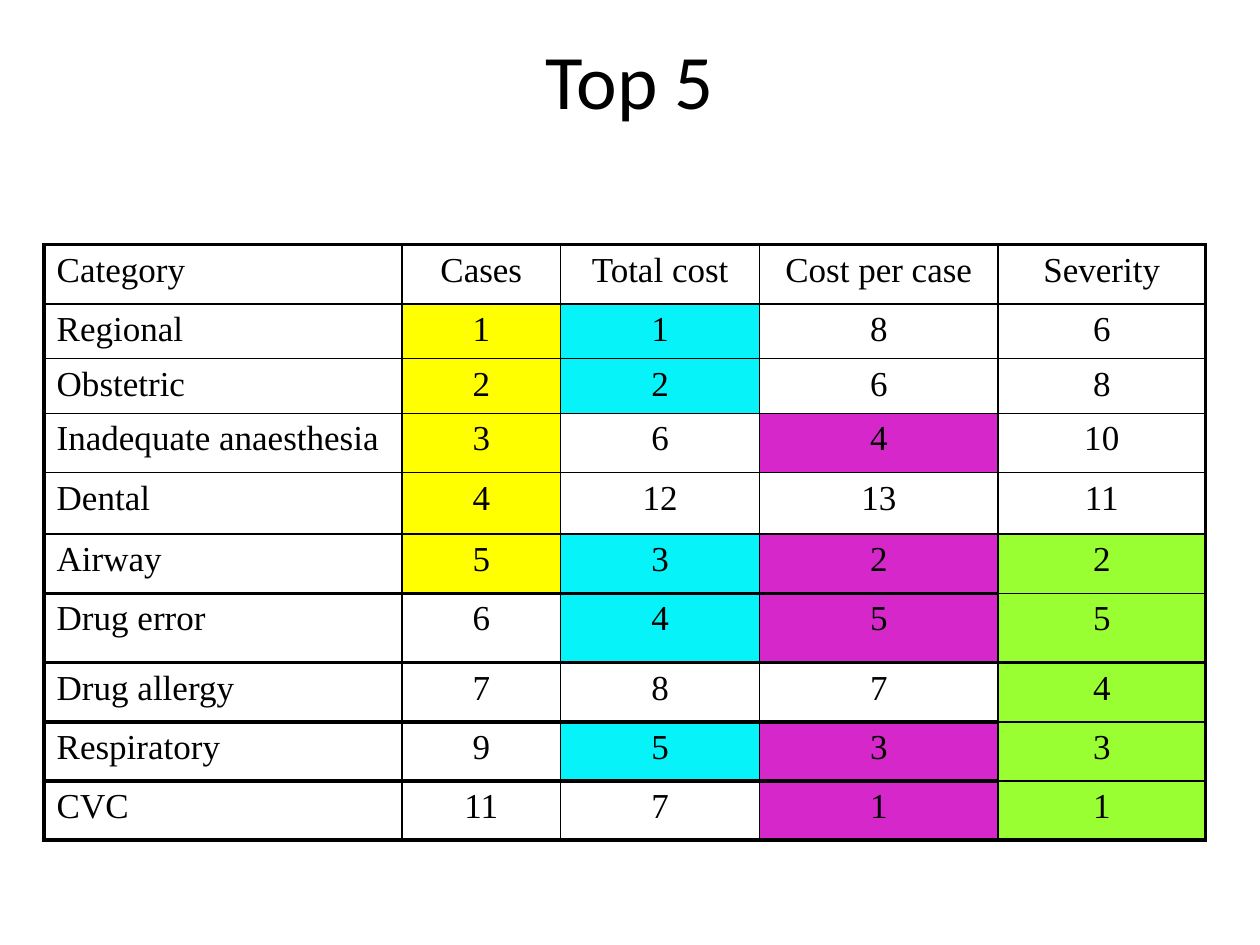
from lxml import etree
from pptx import Presentation, util as u
from pptx.dml.color import RGBColor
from pptx.enum import text
from pptx.oxml import ns

WIDE, HIGH = 10, 7.5
COLS = [2.84, 1.26, 1.58, 1.89, 1.65]
ROWS = [0.47, 0.39, 0.43, 0.47, 0.49, 0.47, 0.55, 0.47, 0.47, 0.47]
TINTS = [None, "FFFF00", "05F3F9", "D628CA", "99FF33"]
TOP = 5
THIN, THICK = 1, 2.25
DATA = [
    ("Category", "Cases", "Total cost", "Cost per case", "Severity"),
    ("Regional", 1, 1, 8, 6),
    ("Obstetric", 2, 2, 6, 8),
    ("Inadequate anaesthesia", 3, 6, 4, 10),
    ("Dental", 4, 12, 13, 11),
    ("Airway", 5, 3, 2, 2),
    ("Drug error", 6, 4, 5, 5),
    ("Drug allergy", 7, 8, 7, 4),
    ("Respiratory", 9, 5, 3, 3),
    ("CVC", 11, 7, 1, 1),
]


def color(code):
    return RGBColor.from_string(code)


def share(left, top, wide, high):
    """Turn percentages of the slide into lengths."""
    pairs = zip((left, top, wide, high), (WIDE, HIGH) * 2)
    return [u.Inches(part * size / 100) for part, size in pairs]


def node(base, tag, **attrs):
    return etree.SubElement(base, ns.qn(tag), **attrs)


def write(frame, words, size=20, font="Times New Roman", tint="000000",
          align="CENTER", before=0):
    """Fill a text frame; before is the space above as a percentage of a line."""
    para = frame.paragraphs[0]
    para.alignment = getattr(text.PP_ALIGN, align)
    if before:
        gap = node(para._p.get_or_add_pPr(), "a:spcBef")
        node(gap, "a:spcPct", val=str(before * 1000))
    run = para.add_run()
    run.text = str(words)
    run.font.size = u.Pt(size)
    run.font.name = font
    run.font.color.rgb = color(tint)


def rule(row, col):
    """Width of the line under a cell; row -1 is the top edge."""
    if row in (-1, len(ROWS) - 1):
        return THICK
    last = col == len(COLS) - 1
    return THICK if row == 6 or (row >= 5 and not last) else THIN


def border(cell, row, col):
    widths = {
        "a:lnL": THICK if col == 0 else THIN,
        "a:lnR": THICK if col == len(COLS) - 1 else THIN,
        "a:lnT": rule(row - 1, col),
        "a:lnB": rule(row, col),
    }
    props = cell._tc.get_or_add_tcPr()
    for tag, width in widths.items():
        line = node(props, tag, w=str(u.Pt(width)))
        node(node(line, "a:solidFill"), "a:srgbClr", val="000000")


def shade(cell, value, tint):
    """Tint a rank that is in the top five of its column."""
    if tint and isinstance(value, int) and value <= TOP:
        cell.fill.solid()
        cell.fill.fore_color.rgb = color(tint)
    else:
        cell.fill.background()


def title(slide, words):
    box = slide.shapes.add_textbox(*share(7.5, 0, 85, 16.67))
    box.text_frame.word_wrap = True
    box.text_frame.vertical_anchor = text.MSO_ANCHOR.MIDDLE
    write(box.text_frame, words, size=44, font="Calibri")


def ranks(slide):
    place = share(3.5, 25.9, 92.1, 63.33)
    table = slide.shapes.add_table(len(ROWS), len(COLS), *place).table
    table.first_row = table.horz_banding = False
    for col, wide in zip(table.columns, COLS):
        col.width = u.Inches(wide)
    for row, high in zip(table.rows, ROWS):
        row.height = u.Inches(high)
    for r, line in enumerate(DATA):
        for c, value in enumerate(line):
            cell = table.cell(r, c)
            write(cell.text_frame, value, before=20,
                  align="CENTER" if c else "LEFT")
            border(cell, r, c)
            shade(cell, value, TINTS[c])


def main():
    deck = Presentation()
    deck.slide_width, deck.slide_height = u.Inches(WIDE), u.Inches(HIGH)
    slide = deck.slides.add_slide(deck.slide_layouts[6])
    title(slide, "Top 5")
    ranks(slide)
    deck.save("out.pptx")


if __name__ == "__main__":
    main()
